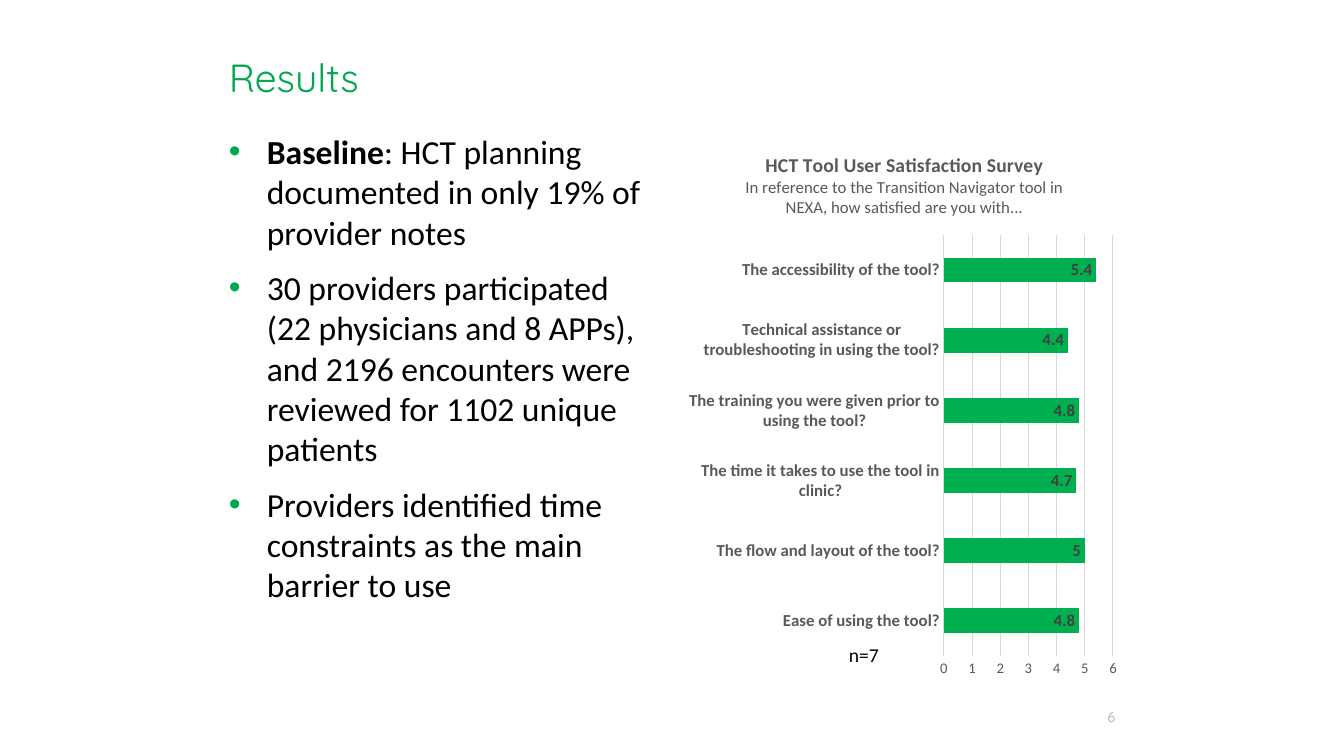
"""Build the survey results slide: bullets on the left, a bar chart on the right."""
from lxml import etree
from pptx import Presentation
from pptx import util as u
from pptx.chart.data import CategoryChartData
from pptx.dml.color import RGBColor
from pptx.enum import chart as ch, text as tx
from pptx.oxml import parse_xml
from pptx.oxml.ns import nsdecls, qn

TITLE = "Results"
POINTS = [
    [("Baseline", True), (": HCT planning documented in only 19% of provider notes", False)],
    [("30 providers participated (22 physicians and 8 APPs), and 2196 encounters "
      "were reviewed for 1102 unique patients", False)],
    [("Providers identified time constraints as the main barrier to use", False)],
]
HEADS = [
    ("HCT Tool User Satisfaction Survey", "head"),
    ("In reference to the Transition Navigator tool in NEXA, how satisfied are you with...", "sub"),
]
SCORES = [
    ("Ease of using the tool?", 4.8),
    ("The flow and layout of the tool?", 5),
    ("The time it takes to use the tool in clinic?", 4.7),
    ("The training you were given prior to using the tool?", 4.8),
    ("Technical assistance or troubleshooting in using the tool?", 4.4),
    ("The accessibility of the tool?", 5.4),
]
COUNT, PAGE = "n=7", "6"

EMU = 914400 / 100.8
WIDE, HIGH = 1344, 756
LEFT, TOP, COL, TALL = 219, 126, 446, 562
RIGHT = 680
BOX = {
    "title": (LEFT, 17, 907, 88),
    "body": (LEFT, TOP, COL, TALL),
    "chart": (RIGHT, TOP, COL, TALL),
    "count": (839, 638, 84, 38),
    "page": (1041, 704, 84, 27),
}
PLOT = (944, 235, 169, 421)
HEAD = (744, 148)
INDENT = 38

THEME = {
    "green": "00A94F", "bar": "00B050", "grid": "D9D9D9",
    "title": dict(name="Quicksand", size=28, color="00A94F"),
    "body": dict(name="Calibri", size=24, color="000000"),
    "count": dict(name="Calibri", size=14, color="000000"),
    "page": dict(name="Quicksand", size=10, color="A6A6A6"),
    "chart": dict(name="Calibri", size=10, color="000000"),
    "head": dict(name="Calibri", size=14, color="595959", bold=True),
    "sub": dict(name="Calibri", size=12, color="595959", bold=False),
    "cat": dict(name="Calibri", size=12, color="595959", bold=True),
    "val": dict(name="Calibri", size=10.5, color="595959", bold=False),
    "label": dict(name="Calibri", size=12, color="404040", bold=True),
}


def px(n):
    return u.Emu(round(n * EMU))


def place(key):
    return [px(n) for n in BOX[key]]


def style(font, key, **more):
    for name, value in {**THEME[key], **more}.items():
        if name == "color":
            font.color.rgb = RGBColor.from_string(value)
        else:
            setattr(font, name, u.Pt(value) if name == "size" else value)


def bullet(para):
    props = para._p.get_or_add_pPr()
    props.set("marL", str(px(INDENT)))
    props.set("indent", str(-px(INDENT)))
    for xml in (f'<a:buClr {nsdecls("a")}><a:srgbClr val="{THEME["green"]}"/></a:buClr>',
                f'<a:buFont {nsdecls("a")} typeface="Arial"/>',
                f'<a:buChar {nsdecls("a")} char="•"/>'):
        props.append(parse_xml(xml))


def write(slide, key, paras, marks=False, align=None, anchor=tx.MSO_ANCHOR.TOP):
    frame = slide.shapes.add_textbox(*place(key)).text_frame
    frame.word_wrap, frame.vertical_anchor = True, anchor
    for i, runs in enumerate(paras):
        para = frame.add_paragraph() if i else frame.paragraphs[0]
        if marks:
            bullet(para)
            para.space_after = u.Pt(6)
        if i:
            para.space_before = u.Pt(4.8)
        para.alignment = align
        for words, bold in runs:
            run = para.add_run()
            run.text = words
            style(run.font, key, bold=bold)


def layout(node, spots):
    old = node.find(qn("c:layout"))
    if old is not None:
        node.remove(old)
    new = parse_xml(f'<c:layout {nsdecls("c")}><c:manualLayout/></c:layout>')
    for name, value in spots:
        etree.SubElement(new[0], qn("c:" + name)).set("val", str(value))
    return new


def share(spot):
    x, y, *size = spot
    vals = [(x - RIGHT) / COL, (y - TOP) / TALL, *(n / m for n, m in zip(size, (COL, TALL)))]
    return [("xMode", "edge"), ("yMode", "edge"),
            *zip("xywh", (round(v, 2) if not size else round(v, 3) for v in vals))]


def line(fmt):
    fmt.line.color.rgb = RGBColor.from_string(THEME["grid"])
    fmt.line.width = u.Pt(0.75)


def draw(slide):
    data = CategoryChartData()
    data.categories = [name for name, _ in SCORES]
    data.add_series("Series 1", [score for _, score in SCORES])
    chart = slide.shapes.add_chart(ch.XL_CHART_TYPE.BAR_CLUSTERED, *place("chart"), data).chart
    style(chart.font, "chart")
    chart.has_legend, chart.has_title = False, True

    frame = chart.chart_title.text_frame
    for i, (words, key) in enumerate(HEADS):
        para = frame.add_paragraph() if i else frame.paragraphs[0]
        run = para.add_run()
        run.text = words
        style(run.font, key)
    title = chart.chart_title._element
    title.find(qn("c:tx")).addnext(layout(title, share(HEAD)))
    area = chart._chartSpace.chart.plotArea
    area.insert(0, layout(area, [("layoutTarget", "inner"), *share(PLOT)]))

    cat, val = chart.category_axis, chart.value_axis
    for axis, key in ((cat, "cat"), (val, "val")):
        axis.major_tick_mark = axis.minor_tick_mark = ch.XL_TICK_MARK.NONE
        style(axis.tick_labels.font, key)
    line(cat.format)
    val.format.line.fill.background()
    val.minimum_scale, val.maximum_scale, val.major_unit = 0, 6, 1
    val.has_major_gridlines = True
    line(val.major_gridlines.format)

    plot = chart.plots[0]
    plot.gap_width, plot.vary_by_categories, plot.has_data_labels = 182, False, True
    labels = plot.data_labels
    labels.show_value, labels.position = True, ch.XL_LABEL_POSITION.INSIDE_END
    style(labels.font, "label")
    fill = plot.series[0].format.fill
    fill.solid()
    fill.fore_color.rgb = RGBColor.from_string(THEME["bar"])


def main():
    deck = Presentation()
    deck.slide_width, deck.slide_height = px(WIDE), px(HIGH)
    slide = deck.slides.add_slide(deck.slide_layouts[6])
    write(slide, "body", POINTS, marks=True)
    write(slide, "page", [[(PAGE, False)]], align=tx.PP_ALIGN.RIGHT)
    write(slide, "title", [[(TITLE, False)]], anchor=tx.MSO_ANCHOR.BOTTOM)
    draw(slide)
    write(slide, "count", [[(COUNT, False)]])
    deck.save("out.pptx")


if __name__ == "__main__":
    main()
